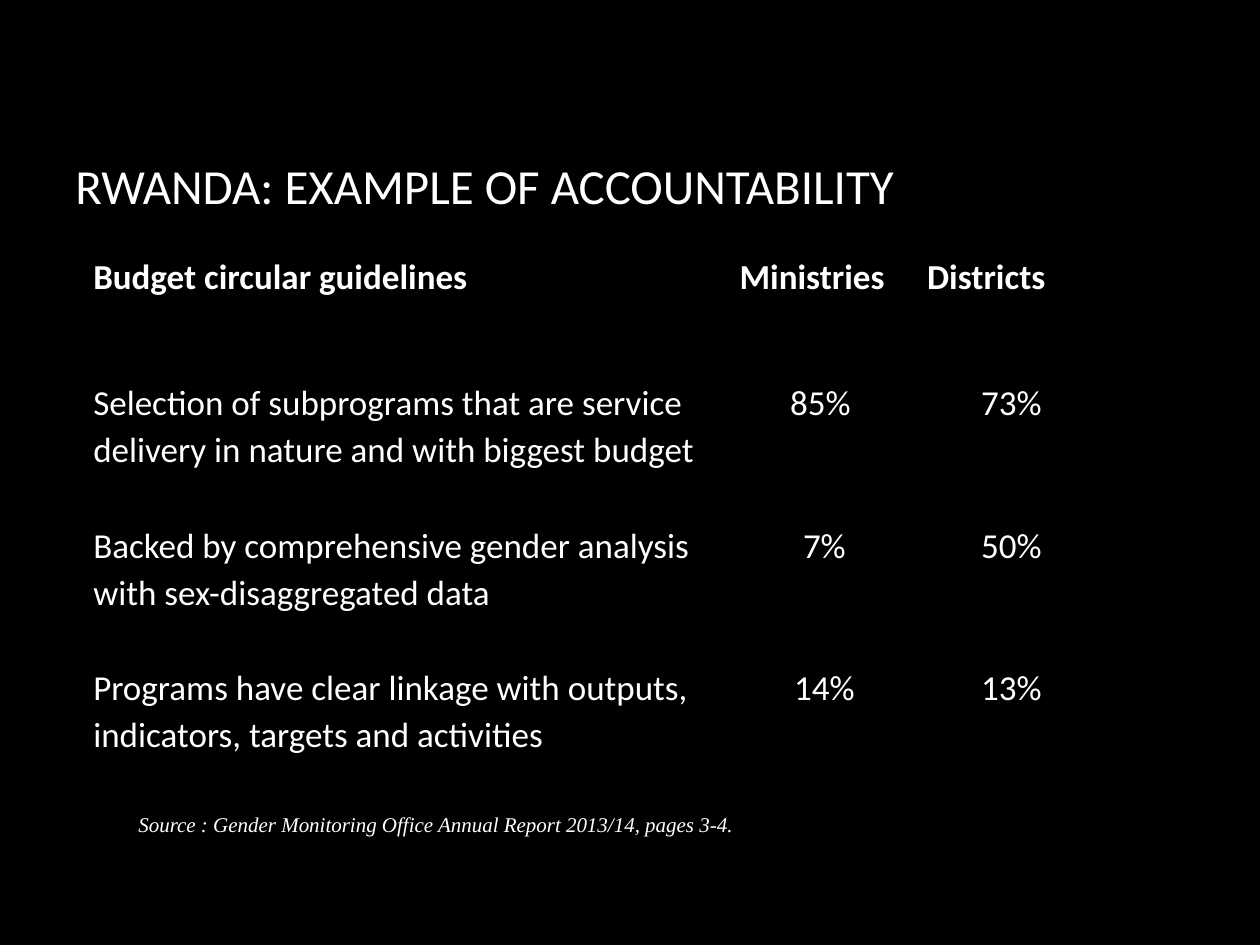
"""Build the slide on accountability in Rwanda's budget circular."""
from lxml.etree import SubElement
from pptx import Presentation
from pptx.dml.color import RGBColor
from pptx.enum.text import MSO_ANCHOR, PP_ALIGN
from pptx.oxml.ns import qn
from pptx.util import Cm, Pt

HUES = {"back": "000000", "text": "FFFFFF"}
ROWS = [
    ("Budget circular guidelines", "Ministries", "Districts"),
    ("Selection of subprograms that are service delivery in nature "
     "and with biggest budget", "85% ", "73%"),
    ("Backed by comprehensive gender analysis with sex-disaggregated data",
     "7%", "50%"),
    ("Programs have clear linkage with outputs, indicators, targets "
     "and activities", "14%", "13%"),
]


def write(frame, text, size, face="Calibri", bold=False, slant=False):
    frame.word_wrap = True
    para = frame.paragraphs[0]
    para.text = text
    font = para.font
    font.name, font.size = face, Pt(size)
    font.bold, font.italic = bold, slant
    font.color.rgb = RGBColor.from_string(HUES["text"])
    return para


def edge(cell):
    props = cell._tc.get_or_add_tcPr()
    for side in ("lnL", "lnR", "lnT", "lnB"):
        line = SubElement(props, qn(f"a:{side}"), w=str(Pt(1)))
        fill = SubElement(line, qn("a:solidFill"))
        SubElement(fill, qn("a:srgbClr"), val=HUES["back"])


deck = Presentation()
deck.slide_width, deck.slide_height = Cm(25.4), Cm(19.05)
slide = deck.slides.add_slide(deck.slide_layouts[6])
back = slide.background.fill
back.solid()
back.fore_color.rgb = RGBColor.from_string(HUES["back"])

title = slide.shapes.add_textbox(Cm(1.27), Cm(1.7), Cm(21.59), Cm(4.04))
title.text_frame.vertical_anchor = MSO_ANCHOR.MIDDLE
write(title.text_frame, "RWANDA: EXAMPLE OF ACCOUNTABILITY", 28)

table = slide.shapes.add_table(
    4, 3, Cm(1.7), Cm(5.08), Cm(20.57), Cm(11.15)).table
table.first_row = table.horz_banding = False
for col, width in zip(table.columns, (13.03, 3.78, 3.76)):
    col.width = Cm(width)
for row, height in zip(table.rows, (2.54, 2.87, 2.87, 2.87)):
    row.height = Cm(height)

for r, texts in enumerate(ROWS):
    for c, text in enumerate(texts):
        cell = table.cell(r, c)
        cell.margin_left = cell.margin_right = Cm(0.18)
        cell.margin_top = cell.margin_bottom = Cm(0)
        edge(cell)
        cell.fill.background()
        para = write(cell.text_frame, text, 20, bold=r == 0)
        para.line_spacing = 1.1
        para.alignment = PP_ALIGN.CENTER if r and c else PP_ALIGN.LEFT

source = slide.shapes.add_textbox(Cm(2.54), Cm(16.23), Cm(15.44), Cm(0.76))
write(source.text_frame,
      "Source : Gender Monitoring Office Annual Report 2013/14, pages 3-4.",
      12, "Times New Roman", slant=True)

deck.save("out.pptx")
